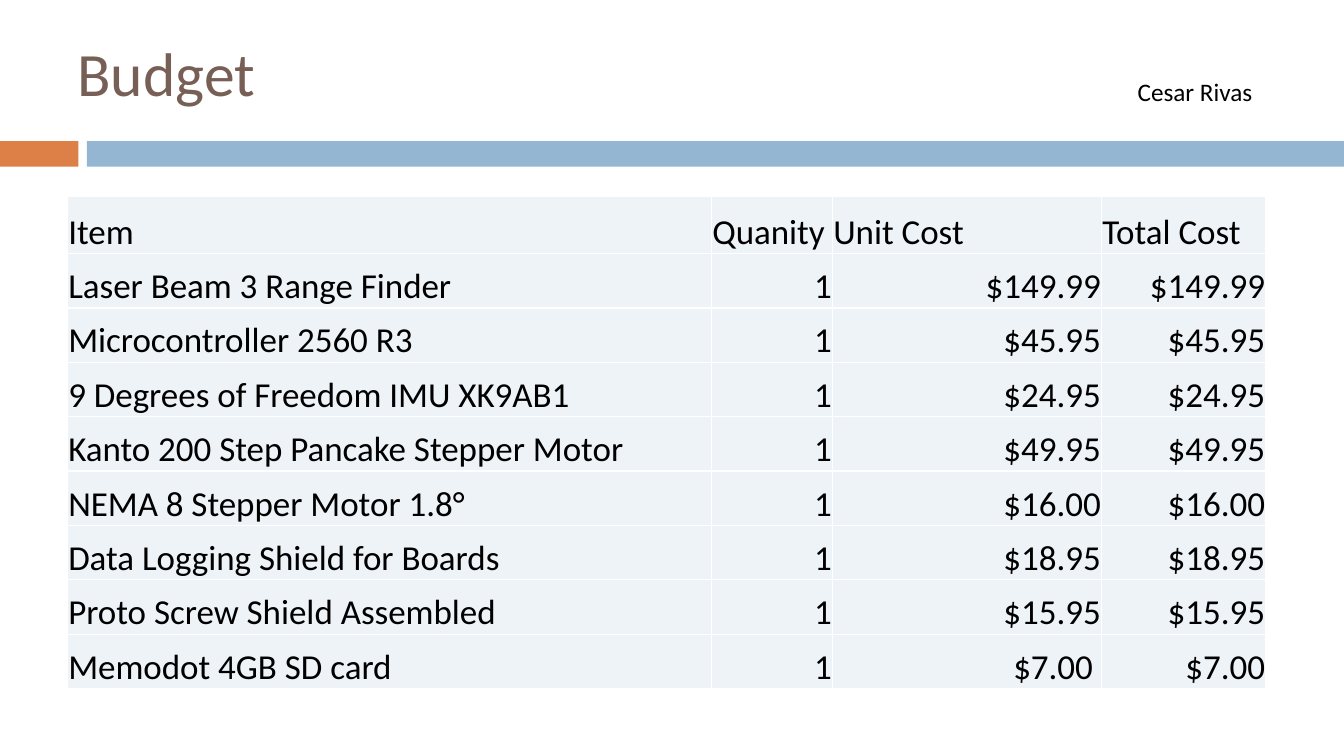
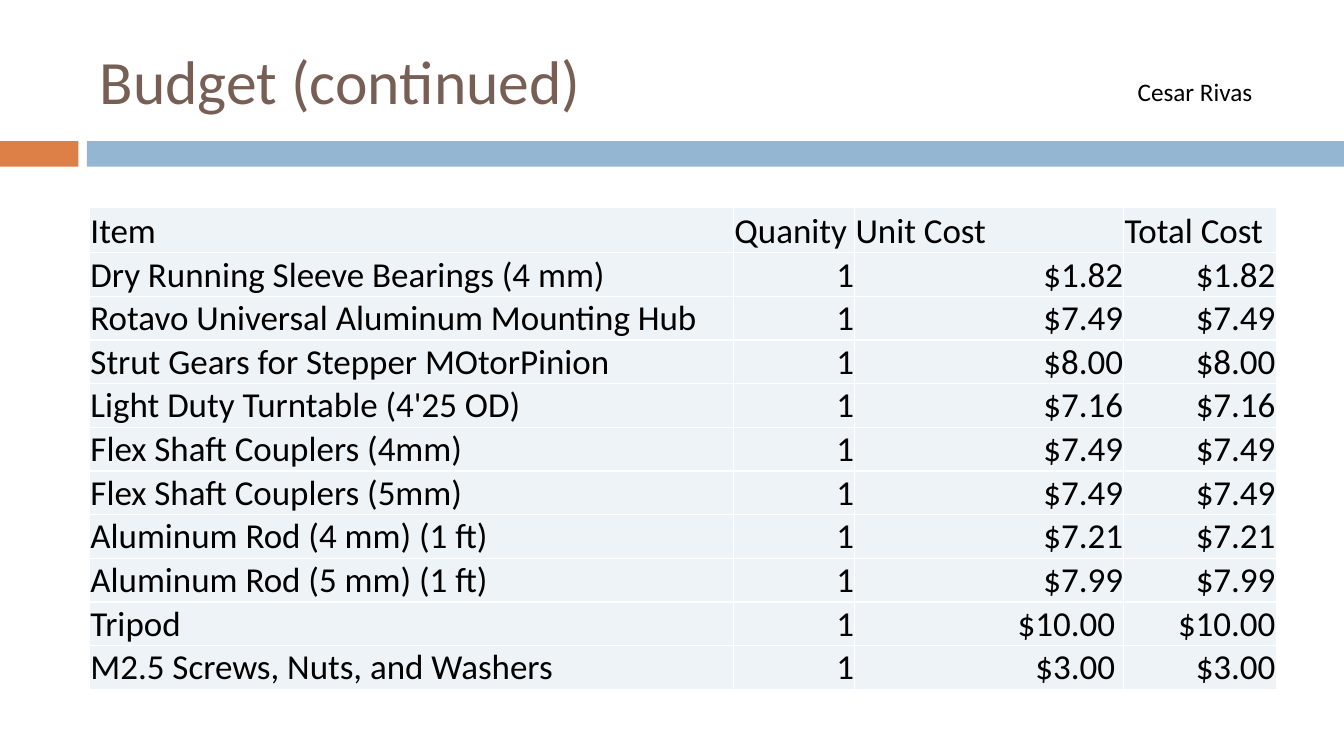
from lxml import etree
from pptx import Presentation
from pptx import util as u
from pptx.dml import color
from pptx.enum import shapes, text
from pptx.oxml import ns

Cm, Pt = u.Cm, u.Pt
FONT = "Calibri"
BLACK, WHITE = "000000", "FFFFFF"
TITLE_BROWN, ACCENT_ORANGE, BAND_BLUE, CELL_TINT = "775F55", "DD8047", "94B6D2", "EEF3F7"
SLIDE_W, SLIDE_H = 33.87, 19.05
BAND_TOP, BAND_H = 3.56, 0.64
BANDS = [(0, 1.98, ACCENT_ORANGE), (2.19, SLIDE_W - 2.19, BAND_BLUE)]
TITLE_W, TITLE_H = 30.2, 2.74
PRESENTER = "Cesar Rivas"
HEADINGS = ["Item", "Quanity", "Unit Cost", "Total Cost"]
QUANTITY = "1"

SENSOR_PARTS = [
    ("Laser Beam 3 Range Finder", "$149.99"),
    ("Microcontroller 2560 R3", "$45.95"),
    ("9 Degrees of Freedom IMU XK9AB1", "$24.95"),
    ("Kanto 200 Step Pancake Stepper Motor", "$49.95"),
    ("NEMA 8 Stepper Motor 1.8°", "$16.00"),
    ("Data Logging Shield for Boards", "$18.95"),
    ("Proto Screw Shield Assembled", "$15.95"),
    ("Memodot 4GB SD card", "$7.00 "),
]
MOUNTING_PARTS = [
    ("Dry Running Sleeve Bearings (4 mm)", "$1.82"),
    ("Rotavo Universal Aluminum Mounting Hub", "$7.49"),
    ("Strut Gears for Stepper MOtorPinion", "$8.00"),
    ("Light Duty Turntable (4'25 OD)", "$7.16"),
    ("Flex Shaft Couplers (4mm)", "$7.49"),
    ("Flex Shaft Couplers (5mm)", "$7.49"),
    ("Aluminum Rod (4 mm) (1 ft)", "$7.21"),
    ("Aluminum Rod (5 mm) (1 ft)", "$7.99"),
    ("Tripod", "$10.00 "),
    ("M2.5 Screws, Nuts, and Washers", "$3.00 "),
]


def rgb(value):
    """Turn a hex string into a colour."""
    return color.RGBColor.from_string(value)


def style(paragraph, size, hue, align=text.PP_ALIGN.LEFT):
    """Set the font and alignment of a paragraph."""
    paragraph.alignment = align
    paragraph.font.name = FONT
    paragraph.font.size = Pt(size)
    paragraph.font.color.rgb = rgb(hue)


def add_bands(slide, layout):
    """Draw the two bands and move them to the layout that all slides share."""
    for left, width, hue in BANDS:
        band = slide.shapes.add_shape(
            shapes.MSO_SHAPE.RECTANGLE, Cm(left), Cm(BAND_TOP), Cm(width), Cm(BAND_H))
        band.fill.solid()
        band.fill.fore_color.rgb = rgb(hue)
        band.line.fill.background()
        band.shadow.inherit = False
        layout.shapes.element.append(band.element)


def add_title(slide, wording, left, top):
    """Place the title placeholder at the given corner."""
    title = slide.shapes.title
    title.left, title.top, title.width, title.height = map(Cm, (left, top, TITLE_W, TITLE_H))
    frame = title.text_frame
    frame.text = wording
    frame.auto_size = text.MSO_AUTO_SIZE.NONE
    frame.vertical_anchor = text.MSO_ANCHOR.MIDDLE
    style(frame.paragraphs[0], 44, TITLE_BROWN)


def add_presenter(slide):
    """Name the presenter at the top right."""
    presenter = slide.shapes.add_textbox(Cm(28.42), Cm(1.8), Cm(3.48), Cm(1.02))
    frame = presenter.text_frame
    frame.text = PRESENTER
    frame.word_wrap = False
    frame.auto_size = text.MSO_AUTO_SIZE.SHAPE_TO_FIT_TEXT
    style(frame.paragraphs[0], 18, BLACK)


def outline_cell(cell):
    """Give a cell thin white borders on all sides."""
    properties = cell._tc.get_or_add_tcPr()
    for index, side in enumerate(("lnL", "lnR", "lnT", "lnB")):
        border = etree.Element(ns.qn(f"a:{side}"), w=str(Pt(1)))
        fill = etree.SubElement(border, ns.qn("a:solidFill"))
        etree.SubElement(fill, ns.qn("a:srgbClr"), val=WHITE)
        properties.insert(index, border)


def fill_cell(cell, wording, align):
    """Write and format one table cell."""
    cell.text = wording
    cell.fill.solid()
    cell.fill.fore_color.rgb = rgb(CELL_TINT)
    cell.margin_left = cell.margin_right = cell.margin_top = Cm(0.02)
    cell.margin_bottom = 0
    cell.vertical_anchor = text.MSO_ANCHOR.BOTTOM
    style(cell.text_frame.paragraphs[0], 25, BLACK, align)
    outline_cell(cell)


def add_budget(slide, parts, left, top, total_w, header_h, row_h):
    """Lay out the cost table from its top left corner."""
    rows = [HEADINGS] + [(item, QUANTITY, cost, cost.strip()) for item, cost in parts]
    widths = [16.23, 3.05, 6.78, total_w]
    heights = [header_h] + [row_h] * len(parts)
    budget = slide.shapes.add_table(
        len(rows), len(widths), Cm(left), Cm(top), Cm(sum(widths)), Cm(sum(heights))).table
    budget.first_row = budget.horz_banding = False
    for column, width in zip(budget.columns, widths):
        column.width = Cm(width)
    for r, (values, height) in enumerate(zip(rows, heights)):
        budget.rows[r].height = Cm(height)
        for c, wording in enumerate(values):
            is_number = r > 0 and c > 0
            align = text.PP_ALIGN.RIGHT if is_number else text.PP_ALIGN.LEFT
            fill_cell(budget.cell(r, c), wording, align)


def add_budget_slide(prs, layout, wording, left, title_top, parts, **table_box):
    """Build one budget slide whose title and table share a left edge."""
    slide = prs.slides.add_slide(layout)
    add_title(slide, wording, left, title_top)
    add_budget(slide, parts, left, **table_box)
    add_presenter(slide)
    return slide


def main():
    """Build and save the presentation."""
    prs = Presentation()
    prs.slide_width, prs.slide_height = Cm(SLIDE_W), Cm(SLIDE_H)
    layout = prs.slide_layouts.get_by_name("Title Only")
    first = add_budget_slide(prs, layout, "Budget", 1.7, 0.43, SENSOR_PARTS,
                             top=4.95, total_w=4.14, header_h=1.44, row_h=1.37)
    add_bands(first, layout)
    add_budget_slide(prs, layout, "Budget (continued)", 2.26, 0.64, MOUNTING_PARTS,
                     top=5.23, total_w=3.84, header_h=1.14, row_h=1.1)
    prs.save("out.pptx")


if __name__ == "__main__":
    main()
